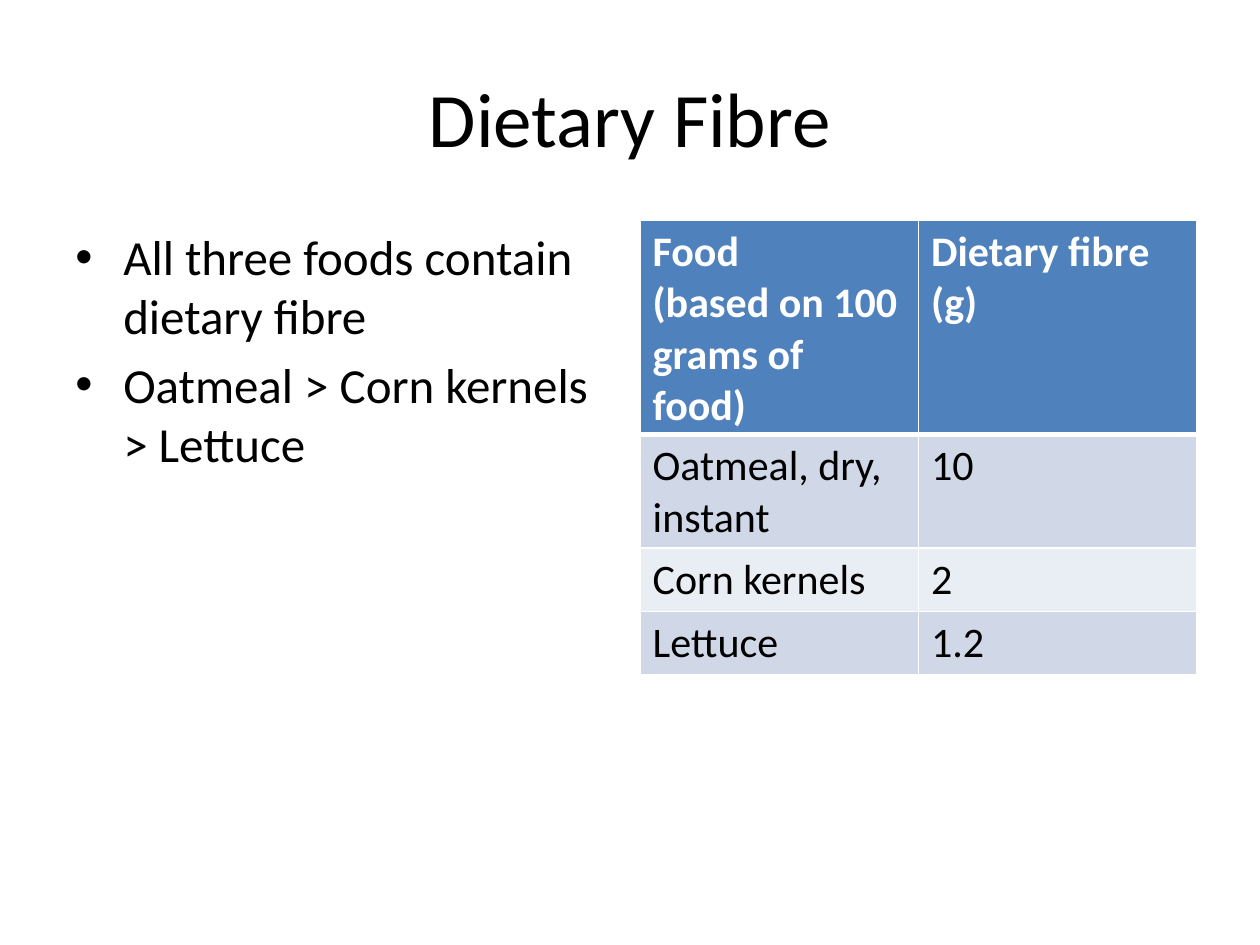
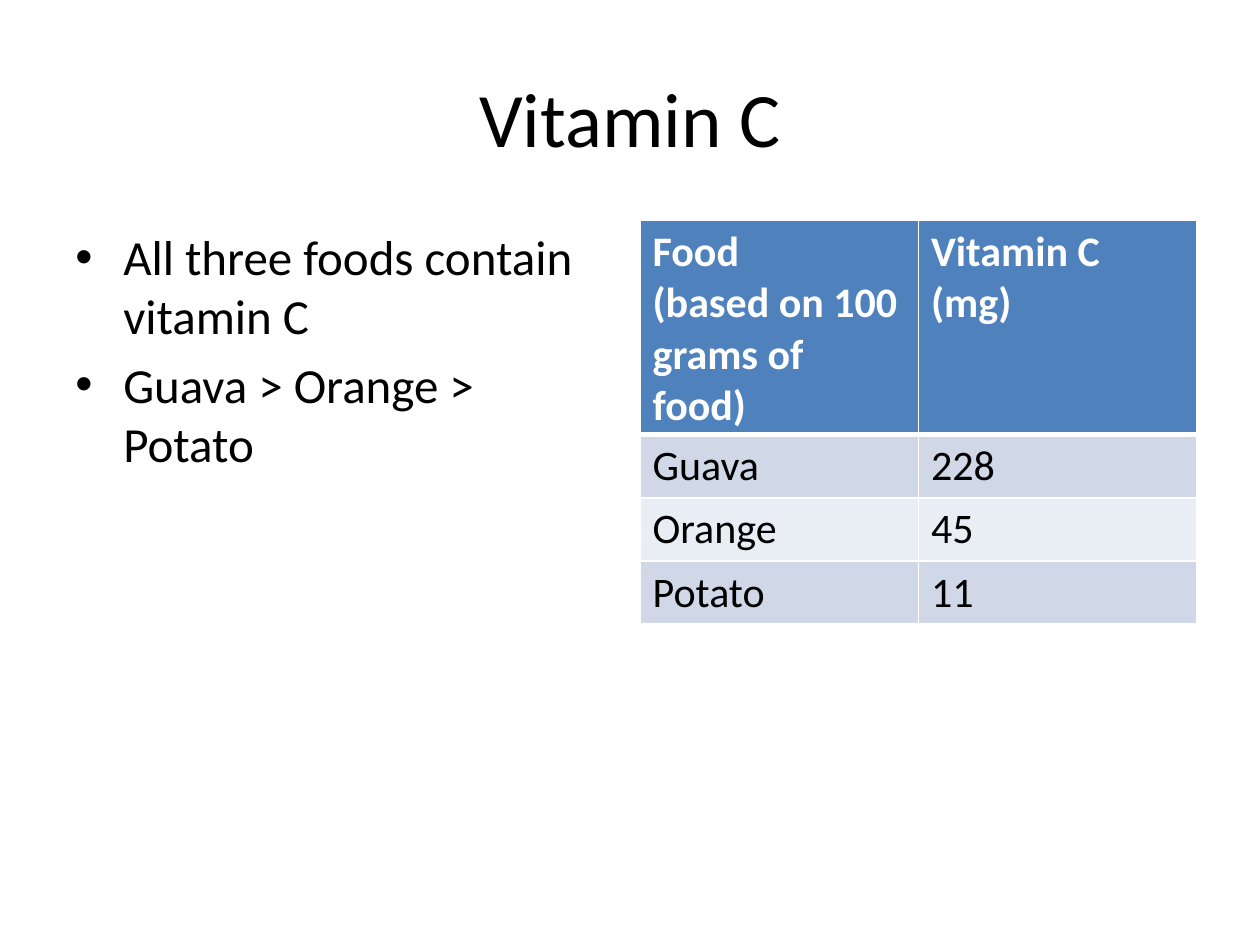
from lxml.etree import SubElement
from pptx import Presentation
from pptx.dml.color import RGBColor
from pptx.enum.text import MSO_ANCHOR as Anchor, PP_ALIGN as Align
from pptx.oxml import parse_xml
from pptx.oxml.ns import nsdecls, qn
from pptx.util import Inches, Pt

# Content
FOOD_HEADING = "Food \n(based on 100 grams of food)"
NUTRIENTS = [
    {
        "title": "Dietary Fibre",
        "points": ["All three foods contain dietary fibre",
                   "Oatmeal > Corn kernels > Lettuce"],
        "amounts": [(FOOD_HEADING, "Dietary fibre (g)"),
                    ("Oatmeal, dry, instant", "10"),
                    ("Corn kernels", "2"),
                    ("Lettuce", "1.2")],
    },
    {
        "title": "Vitamin C",
        "points": ["All three foods contain vitamin C",
                   "Guava > Orange > Potato"],
        "amounts": [(FOOD_HEADING, "Vitamin C (mg)"),
                    ("Guava", "228"),
                    ("Orange", "45"),
                    ("Potato", "11")],
    },
]

# Shared look
COLORS = {"text": "000000", "heading": "FFFFFF", "header": "4F81BD",
          "odd": "D0D8E8", "even": "E9EDF4", "rule": "FFFFFF"}
FORMATS = {
    "title": {"size": Pt(44), "bold": False},
    "point": {"size": Pt(28), "bold": False},
    "heading": {"size": Pt(24), "bold": True},
    "amount": {"size": Pt(24), "bold": False},
}
FONT = "Calibri"
MARGIN, GAP = 0.5, 0.16
SLIDE_W, SLIDE_H = 10, 7.5
TITLE_TOP, TITLE_H = 0.3, 1.25
BODY_TOP, BODY_H = 1.75, 4.95
HALF_W = (SLIDE_W - 2 * MARGIN - GAP) / 2
ROW_H = 0.41
INDENT = Inches(0.38)


def write(paragraph, text, style, color="text"):
    paragraph.text = text
    for run in paragraph.runs:
        run.font.name = FONT
        run.font.color.rgb = RGBColor.from_string(COLORS[color])
        for attribute, value in FORMATS[style].items():
            setattr(run.font, attribute, value)


def add_frame(slide, *box):
    frame = slide.shapes.add_textbox(*map(Inches, box)).text_frame
    frame.word_wrap = True
    return frame


def add_title(slide, title):
    frame = add_frame(slide, MARGIN, TITLE_TOP, SLIDE_W - 2 * MARGIN, TITLE_H)
    frame.vertical_anchor = Anchor.MIDDLE
    frame.paragraphs[0].alignment = Align.CENTER
    write(frame.paragraphs[0], title, "title")


def add_points(slide, points):
    frame = add_frame(slide, MARGIN, BODY_TOP, HALF_W, BODY_H)
    for index, point in enumerate(points):
        paragraph = frame.add_paragraph() if index else frame.paragraphs[0]
        write(paragraph, point, "point")
        paragraph.space_before = Pt(5.6)
        # Hanging bullet
        properties = paragraph._p.get_or_add_pPr()
        properties.set("marL", str(INDENT))
        properties.set("indent", str(-INDENT))
        SubElement(properties, qn("a:buFont"), typeface="Arial")
        SubElement(properties, qn("a:buChar"), char="•")


def set_borders(cell, widths):
    """Borders come before the fill in the cell properties."""
    properties = cell._tc.get_or_add_tcPr()
    for index, (side, width) in enumerate(widths.items()):
        properties.insert(index, parse_xml(
            f'<a:ln{side} {nsdecls("a")} w="{Pt(width)}"><a:solidFill>'
            f'<a:srgbClr val="{COLORS["rule"]}"/></a:solidFill></a:ln{side}>'))


def add_amounts(slide, amounts):
    left = MARGIN + HALF_W + GAP
    table = slide.shapes.add_table(
        len(amounts), len(amounts[0]), Inches(left), Inches(BODY_TOP),
        Inches(HALF_W), Inches(ROW_H * len(amounts))).table
    for r, row in enumerate(amounts):
        band = "header" if r == 0 else "odd" if r % 2 else "even"
        for c, text in enumerate(row):
            cell = table.cell(r, c)
            cell.fill.solid()
            cell.fill.fore_color.rgb = RGBColor.from_string(COLORS[band])
            set_borders(cell, {"L": 1, "R": 1, "T": 3 if r == 1 else 1,
                               "B": 3 if r == 0 else 1})
            style, color = ("amount", "text") if r else ("heading", "heading")
            write(cell.text_frame.paragraphs[0], text, style, color)


def main():
    deck = Presentation()
    deck.slide_width, deck.slide_height = Inches(SLIDE_W), Inches(SLIDE_H)
    for nutrient in NUTRIENTS:
        slide = deck.slides.add_slide(deck.slide_layouts[6])
        add_title(slide, nutrient["title"])
        add_points(slide, nutrient["points"])
        add_amounts(slide, nutrient["amounts"])
    deck.save("out.pptx")


if __name__ == "__main__":
    main()
